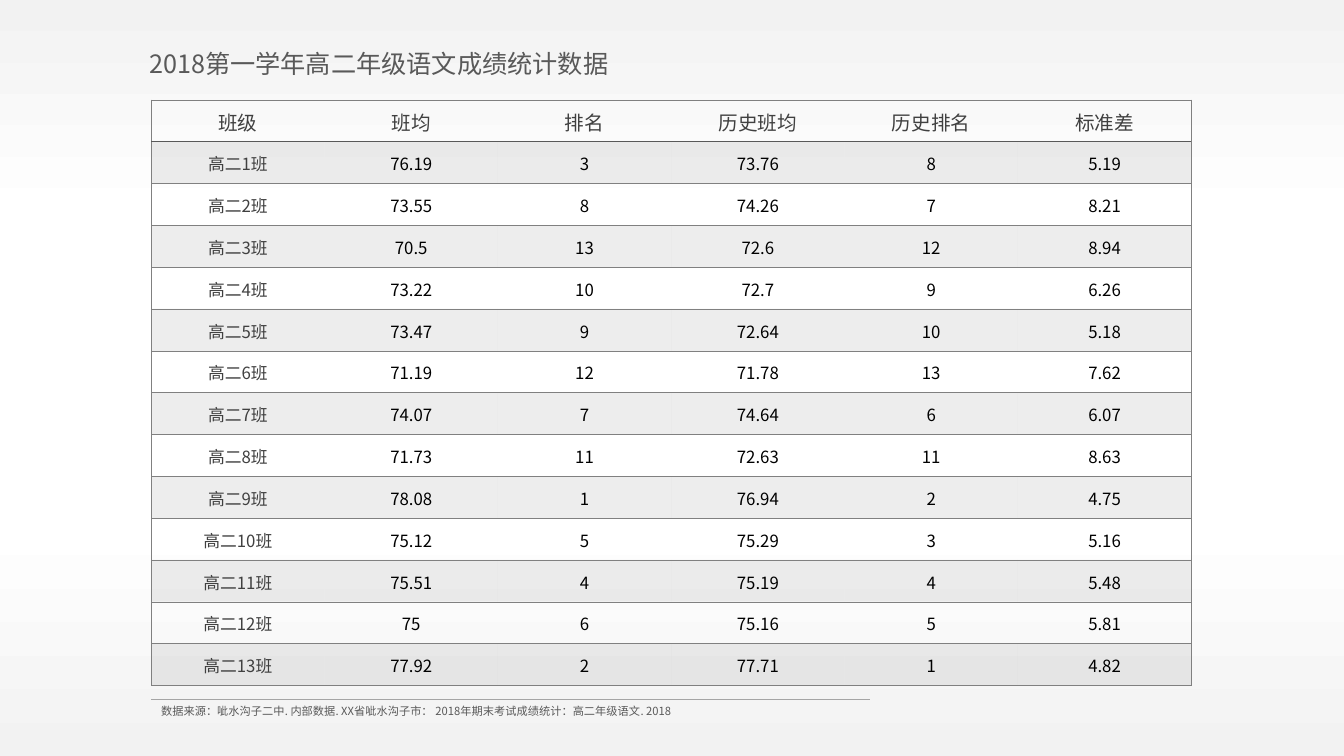
from dataclasses import dataclass

import lxml.etree
import pptx
import pptx.dml.color
import pptx.enum.shapes
import pptx.enum.text
import pptx.oxml.ns
import pptx.slide
import pptx.table
import pptx.text.text
import pptx.util

Pt = pptx.util.Pt
qn = pptx.oxml.ns.qn


@dataclass(frozen=True)
class Theme:
    font: str = "Noto Sans CJK SC"
    title_color: str = "595959"
    label_color: str = "404040"
    figure_color: str = "000000"
    band_color: str = "A5A5A5"
    band_opacity: int = 20
    rule_color: str = "808080"
    title_size: float = 18
    header_size: float = 14
    body_size: float = 12
    source_size: float = 8
    backdrop: tuple = ((0, "F2F2F2"), (29, "FFFFFF"), (69, "FFFFFF"), (100, "F2F2F2"))


@dataclass(frozen=True)
class Border:
    color: str
    width: float


@dataclass(frozen=True)
class ClassScore:
    number: int
    mean: str
    rank: str
    past_mean: str
    past_rank: str
    deviation: str

    def texts(self) -> list[str]:
        return [f"高二{self.number}班", self.mean, self.rank,
                self.past_mean, self.past_rank, self.deviation]


THEME = Theme()
THIN = Border(THEME.rule_color, 0.25)
HEADER_RULE = Border(THEME.title_color, 1)
HEADERS = ["班级", "班均", "排名", "历史班均", "历史排名", "标准差"]
SCORES = [
    ClassScore(1, "76.19", "3", "73.76", "8", "5.19"),
    ClassScore(2, "73.55", "8", "74.26", "7", "8.21"),
    ClassScore(3, "70.5", "13", "72.6", "12", "8.94"),
    ClassScore(4, "73.22", "10", "72.7", "9", "6.26"),
    ClassScore(5, "73.47", "9", "72.64", "10", "5.18"),
    ClassScore(6, "71.19", "12", "71.78", "13", "7.62"),
    ClassScore(7, "74.07", "7", "74.64", "6", "6.07"),
    ClassScore(8, "71.73", "11", "72.63", "11", "8.63"),
    ClassScore(9, "78.08", "1", "76.94", "2", "4.75"),
    ClassScore(10, "75.12", "5", "75.29", "3", "5.16"),
    ClassScore(11, "75.51", "4", "75.19", "4", "5.48"),
    ClassScore(12, "75", "6", "75.16", "5", "5.81"),
    ClassScore(13, "77.92", "2", "77.71", "1", "4.82"),
]
TITLE = "2018第一学年高二年级语文成绩统计数据"
SOURCE = "数据来源：呲水沟子二中. 内部数据. XX省呲水沟子市： 2018年期末考试成绩统计：高二年级语文. 2018"
LEFT, TABLE_TOP = 108, 71.28
COLUMN_WIDTH, ROW_HEIGHT = 123.84, 29.88
SOURCE_TOP = 499.68


def rgb(color: str) -> pptx.dml.color.RGBColor:
    return pptx.dml.color.RGBColor.from_string(color)


def add_span(para: pptx.text.text._Paragraph, text: str, size: float, color: str) -> None:
    span = para.add_run()
    span.text = text
    span.font.size = Pt(size)
    span.font.bold = False
    span.font.color.rgb = rgb(color)
    span.font.name = THEME.font
    properties = span.font._element
    lxml.etree.SubElement(properties, qn("a:ea"), typeface=THEME.font)


def paint_backdrop(page: pptx.slide.Slide) -> None:
    fill = page.background.fill
    fill.gradient()
    fill.gradient_angle = 270
    stops = next(page.element.iter(qn("a:gsLst")))
    for stop in list(stops):
        stops.remove(stop)
    for percent, color in THEME.backdrop:
        stop = lxml.etree.SubElement(stops, qn("a:gs"), pos=str(percent * 1000))
        lxml.etree.SubElement(stop, qn("a:srgbClr"), val=color)


def set_borders(cell: pptx.table._Cell, borders: dict[str, Border | None]) -> None:
    properties = cell._tc.get_or_add_tcPr()
    for position, side in enumerate("LRTB"):
        border = borders[side]
        line = lxml.etree.Element(qn(f"a:ln{side}"))
        if border is None:
            line.set("w", "0")
            lxml.etree.SubElement(line, qn("a:noFill"))
        else:
            line.set("w", str(int(Pt(border.width))))
            paint = lxml.etree.SubElement(line, qn("a:solidFill"))
            lxml.etree.SubElement(paint, qn("a:srgbClr"), val=border.color)
        properties.insert(position, line)


def fill_cell(cell: pptx.table._Cell, banded: bool) -> None:
    if not banded:
        cell.fill.background()
        return
    cell.fill.solid()
    cell.fill.fore_color.rgb = rgb(THEME.band_color)
    color = next(cell._tc.tcPr.iterchildren(qn("a:solidFill")))[0]
    lxml.etree.SubElement(color, qn("a:alpha"), val=str(THEME.band_opacity * 1000))


def add_score_table(page: pptx.slide.Slide) -> None:
    rows = [HEADERS] + [score.texts() for score in SCORES]
    last_column = len(HEADERS) - 1
    frame = page.shapes.add_table(
        len(rows), len(HEADERS), Pt(LEFT), Pt(TABLE_TOP),
        Pt(COLUMN_WIDTH * len(HEADERS)), Pt(ROW_HEIGHT * len(rows)))
    table = frame.table
    table.first_row = table.horz_banding = False
    for column in table.columns:
        column.width = Pt(COLUMN_WIDTH)
    for row_index, texts in enumerate(rows):
        table.rows[row_index].height = Pt(ROW_HEIGHT)
        size = THEME.body_size if row_index else THEME.header_size
        for column_index, text in enumerate(texts):
            cell = table.cell(row_index, column_index)
            cell.margin_left = cell.margin_right = cell.margin_top = Pt(1.44)
            cell.margin_bottom = Pt(0)
            cell.vertical_anchor = pptx.enum.text.MSO_ANCHOR.MIDDLE
            para = cell.text_frame.paragraphs[0]
            para.alignment = pptx.enum.text.PP_ALIGN.CENTER
            is_figure = row_index > 0 and column_index > 0
            add_span(para, text, size,
                     THEME.figure_color if is_figure else THEME.label_color)
            fill_cell(cell, row_index % 2 == 1)
            set_borders(cell, {
                "L": THIN if column_index == 0 else None,
                "R": THIN if column_index == last_column else None,
                "T": HEADER_RULE if row_index == 1 else THIN,
                "B": HEADER_RULE if row_index == 0 else THIN,
            })


def add_title(page: pptx.slide.Slide) -> None:
    title = page.shapes.title
    title.left, title.top, title.width, title.height = Pt(99.36), Pt(30.96), Pt(347.04), Pt(28.8)
    frame = title.text_frame
    frame.word_wrap = False
    frame.auto_size = pptx.enum.text.MSO_AUTO_SIZE.SHAPE_TO_FIT_TEXT
    frame.vertical_anchor = pptx.enum.text.MSO_ANCHOR.TOP
    para = frame.paragraphs[0]
    para.alignment = pptx.enum.text.PP_ALIGN.LEFT
    add_span(para, TITLE, THEME.title_size, THEME.title_color)


def add_source(page: pptx.slide.Slide) -> None:
    box = page.shapes.add_textbox(Pt(LEFT), Pt(SOURCE_TOP), Pt(480.24), Pt(17.28))
    box.text_frame.word_wrap = True
    box.text_frame.auto_size = pptx.enum.text.MSO_AUTO_SIZE.SHAPE_TO_FIT_TEXT
    add_span(box.text_frame.paragraphs[0], SOURCE, THEME.source_size, THEME.title_color)
    rule = page.shapes.add_connector(
        pptx.enum.shapes.MSO_CONNECTOR.STRAIGHT,
        Pt(LEFT), Pt(SOURCE_TOP), Pt(621.36), Pt(SOURCE_TOP))
    rule.line.color.rgb = rgb(THEME.band_color)
    rule.line.width = Pt(0.5)
    lxml.etree.SubElement(rule._element.spPr, qn("a:effectLst"))


def main() -> None:
    deck = pptx.Presentation()
    deck.slide_width, deck.slide_height = Pt(960), Pt(540)
    page = deck.slides.add_slide(deck.slide_layouts.get_by_name("Title Only"))
    paint_backdrop(page)
    add_score_table(page)
    add_title(page)
    add_source(page)
    deck.save("out.pptx")


if __name__ == "__main__":
    main()
